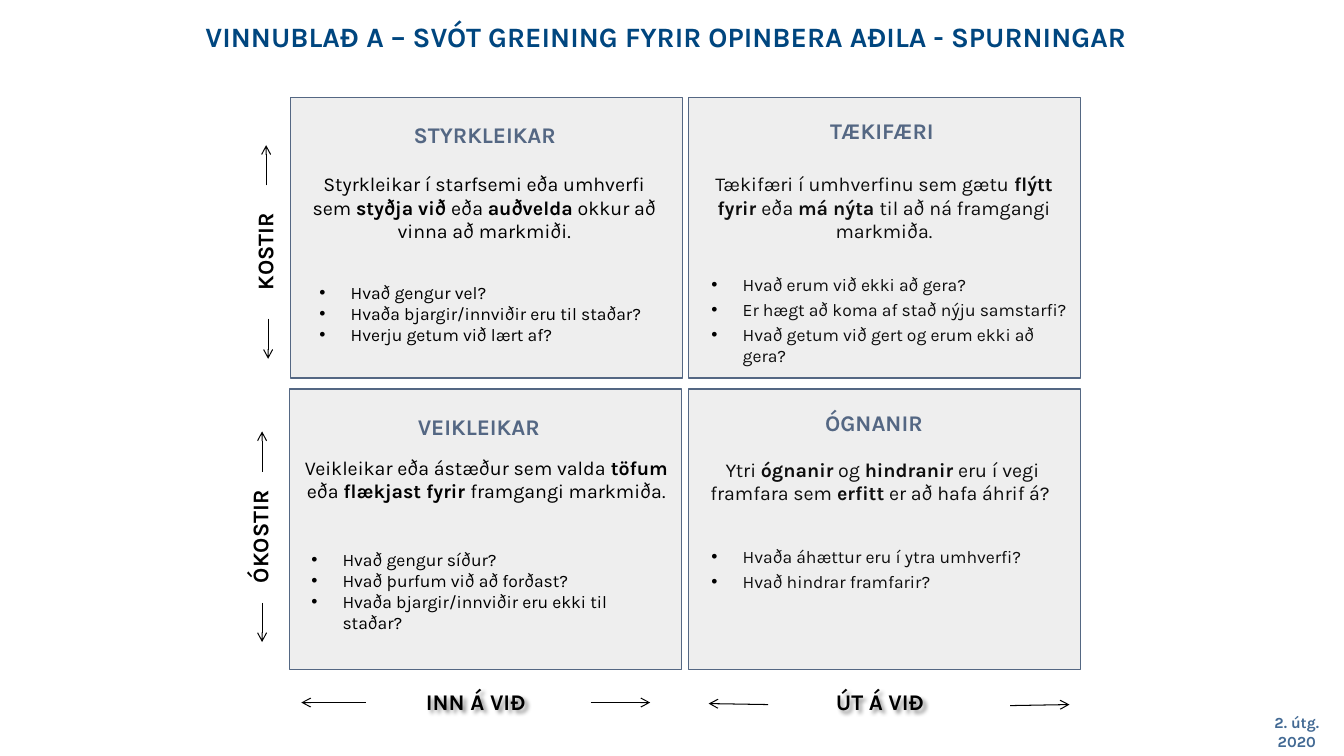
from lxml import etree
from pptx import Presentation
from pptx.dml.color import RGBColor
from pptx.enum.shapes import MSO_CONNECTOR, MSO_SHAPE
from pptx.enum.text import MSO_ANCHOR, MSO_AUTO_SIZE, PP_ALIGN
from pptx.oxml.ns import qn
from pptx.util import Inches, Pt

RECTANGLE = MSO_SHAPE.RECTANGLE
STRAIGHT = MSO_CONNECTOR.STRAIGHT
TOP, MIDDLE = MSO_ANCHOR.TOP, MSO_ANCHOR.MIDDLE
LEFT, CENTER = PP_ALIGN.LEFT, PP_ALIGN.CENTER
GROW, FIXED = MSO_AUTO_SIZE.SHAPE_TO_FIT_TEXT, MSO_AUTO_SIZE.NONE

COLUMNS, ROWS = 133.33, 75
PANEL_SIZE = (38.9, 27.8)
COLORS = {
    "panel": "EEEEEE",
    "slate": "546783",
    "title": "00467F",
    "edition": "436A94",
    "black": "000000",
    "ink": "0D0D0D",
}


class SwotSheet:
    font = "Karla"

    def __init__(self, presentation):
        self.slide = presentation.slides.add_slide(presentation.slide_layouts[6])
        self.column = presentation.slide_width / COLUMNS
        self.row = presentation.slide_height / ROWS

    def place(self, columns, rows):
        return round(columns * self.column), round(rows * self.row)

    def color(self, name):
        return RGBColor.from_string(COLORS[name])

    def panel(self, corner):
        panel = self.slide.shapes.add_shape(
            RECTANGLE, *self.place(*corner), *self.place(*PANEL_SIZE))
        panel.shadow.inherit = False
        panel.fill.solid()
        panel.fill.fore_color.rgb = self.color("panel")
        panel.line.color.rgb = self.color("slate")
        panel.line.width = Pt(1)

    def text(self, area, lines, size, color, bold=None, align=CENTER, anchor=TOP,
             fit=GROW, after=0, bullets=False, rotation=0, inset=True):
        box = self.slide.shapes.add_textbox(*self.place(*area[:2]), *self.place(*area[2:]))
        box.rotation = rotation
        frame = box.text_frame
        frame.word_wrap = True
        frame.auto_size = fit
        frame.vertical_anchor = anchor
        if not inset:
            frame.margin_left = frame.margin_right = 0
            frame.margin_top = frame.margin_bottom = 0
        for index, line in enumerate(lines):
            paragraph = frame.paragraphs[0] if index == 0 else frame.add_paragraph()
            paragraph.alignment = align
            if after:
                paragraph.space_after = Pt(after)
            if bullets:
                self.bullet(paragraph)
            paragraph.font.name = self.font
            paragraph.font.size = Pt(size)
            paragraph.font.color.rgb = self.color(color)
            paragraph.font.bold = bold
            for part, words in enumerate(line.split("*")):
                if words:
                    run = paragraph.add_run()
                    run.text = words
                    if part % 2:
                        run.font.bold = True
        return box

    def bullet(self, paragraph):
        properties = paragraph._p.get_or_add_pPr()
        properties.set("marL", str(Inches(0.31)))
        properties.set("indent", str(-Inches(0.31)))
        bullet_color = etree.SubElement(properties, qn("a:buClr"))
        etree.SubElement(bullet_color, qn("a:srgbClr"), val=COLORS["black"])
        etree.SubElement(properties, qn("a:buFont"), typeface="Arial")
        etree.SubElement(properties, qn("a:buChar"), char="•")

    def axis_label(self, area, label, rotation=0):
        self.text(area, [label], 16, "black", bold=True, rotation=rotation)

    def shadowed_label(self, area, label):
        box = self.text(area, [label], 16, "black", bold=True,
                        anchor=MIDDLE, fit=FIXED, inset=False)
        effects = etree.SubElement(box._element.spPr, qn("a:effectLst"))
        shadow = etree.SubElement(effects, qn("a:outerShdw"), blurRad="38100",
                                  dist="38100", dir="2700000", algn="tl")
        tint = etree.SubElement(shadow, qn("a:srgbClr"), val=COLORS["black"])
        etree.SubElement(tint, qn("a:alpha"), val="43000")

    def arrow(self, start, end):
        arrow = self.slide.shapes.add_connector(
            STRAIGHT, *self.place(*start), *self.place(*end))
        arrow.line.color.rgb = self.color("black")
        arrow.line.width = Pt(0.75)
        etree.SubElement(arrow.line._get_or_add_ln(), qn("a:tailEnd"), type="arrow")
        etree.SubElement(arrow._element.spPr, qn("a:effectLst"))


QUADRANTS = [
    {"corner": (28.8, 9.7), "color": "black", "after": 0,
     "heading": ((30.8, 11.5, 34.6, 3.7), "STYRKLEIKAR"),
     "summary": ((29.9, 16.6, 36.3, 8.1),
                 "Styrkleikar í starfsemi eða umhverfi sem *styðja við *eða *auðvelda*"
                 " okkur að vinna að markmiði."),
     "questions": ((30.7, 27.5, 36.6, 7.3),
                   ["Hvað gengur vel?",
                    "Hvaða bjargir/innviðir eru til staðar?",
                    "Hverju getum við lært af?"])},
    {"corner": (28.7, 38.6), "color": "black", "after": 0,
     "heading": ((28, 40.5, 39, 3.7), "VEIKLEIKAR"),
     "summary": ((29.2, 44.7, 38.1, 5.7),
                 "Veikleikar eða ástæður sem valda *töfum* eða *flækjast fyrir *"
                 "framgangi markmiða."),
     "questions": ((29.9, 54, 36.6, 9.4),
                   ["Hvað gengur síður?",
                    "Hvað þurfum við að forðast?",
                    "Hvaða bjargir/innviðir eru ekki til staðar?"])},
    {"corner": (68.3, 38.6), "color": "ink", "after": 3,
     "heading": ((67.4, 40.1, 38.6, 3.7), "ÓGNANIR"),
     "summary": ((68.5, 44.9, 38.1, 5.7),
                 "Ytri *ógnanir* og *hindranir* eru í vegi framfara sem *erfitt*"
                 " er að hafa áhrif á? "),
     "questions": ((69.6, 53.7, 34.2, 5.6),
                   ["Hvaða áhættur eru í ytra umhverfi?",
                    "Hvað hindrar framfarir?"])},
    {"corner": (68.3, 9.7), "color": "ink", "after": 3,
     "heading": ((78.9, 11.1, 17.2, 3.7), "TÆKIFÆRI"),
     "summary": ((69.6, 16.6, 36.2, 10.9),
                 "Tækifæri í umhverfinu sem gætu *flýtt fyrir *eða *má nýta *"
                 "til að ná framgangi markmiða."),
     "questions": ((69.6, 26.7, 37.3, 10.3),
                   ["Hvað erum við ekki að gera?",
                    "Er hægt að koma af stað nýju samstarfi?",
                    "Hvað getum við gert og erum ekki að gera?"])},
]

ARROWS = [
    ((26.4, 18.4), (26.4, 14.4)),
    ((26.6, 31.6), (26.6, 35.6)),
    ((26, 46.8), (26, 42.8)),
    ((26, 59.8), (26, 63.7)),
    ((36.3, 69.7), (29.9, 69.7)),
    ((58.6, 69.7), (64.5, 69.7)),
    ((76.2, 69.9), (70.3, 69.8)),
    ((100.2, 70), (106.1, 69.9)),
]


def main():
    presentation = Presentation()
    presentation.slide_width = Inches(13.33)
    presentation.slide_height = Inches(7.5)
    sheet = SwotSheet(presentation)

    for quadrant in QUADRANTS:
        sheet.panel(quadrant["corner"])
        color, after = quadrant["color"], quadrant["after"]
        area, heading = quadrant["heading"]
        sheet.text(area, [heading], 16, "slate", bold=True)
        area, summary = quadrant["summary"]
        sheet.text(area, [summary], 14, color, after=after)
        area, questions = quadrant["questions"]
        sheet.text(area, questions, 12.5, color, align=LEFT, after=after, bullets=True)

    sheet.axis_label((19.7, 23.1, 13.1, 3.7), "KOSTIR", rotation=270)
    sheet.axis_label((19.2, 51.4, 13.1, 3.7), "ÓKOSTIR", rotation=270)
    sheet.shadowed_label((42, 68.3, 10.4, 2.5), "INN Á VIÐ")
    sheet.shadowed_label((82.1, 68.1, 10.4, 3), "ÚT Á VIÐ")
    for start, end in ARROWS:
        sheet.arrow(start, end)

    sheet.text((19.4, 1.3, 94.5, 4.7),
               ["VINNUBLAÐ A – SVÓT GREINING FYRIR OPINBERA AÐILA - SPURNINGAR"],
               20, "title", bold=True, align=LEFT, anchor=MIDDLE, fit=FIXED)
    sheet.text((125.4, 70.3, 6.5, 4.7), ["2. útg. 2020"], 11, "edition", bold=True)
    presentation.save("out.pptx")


if __name__ == "__main__":
    main()
